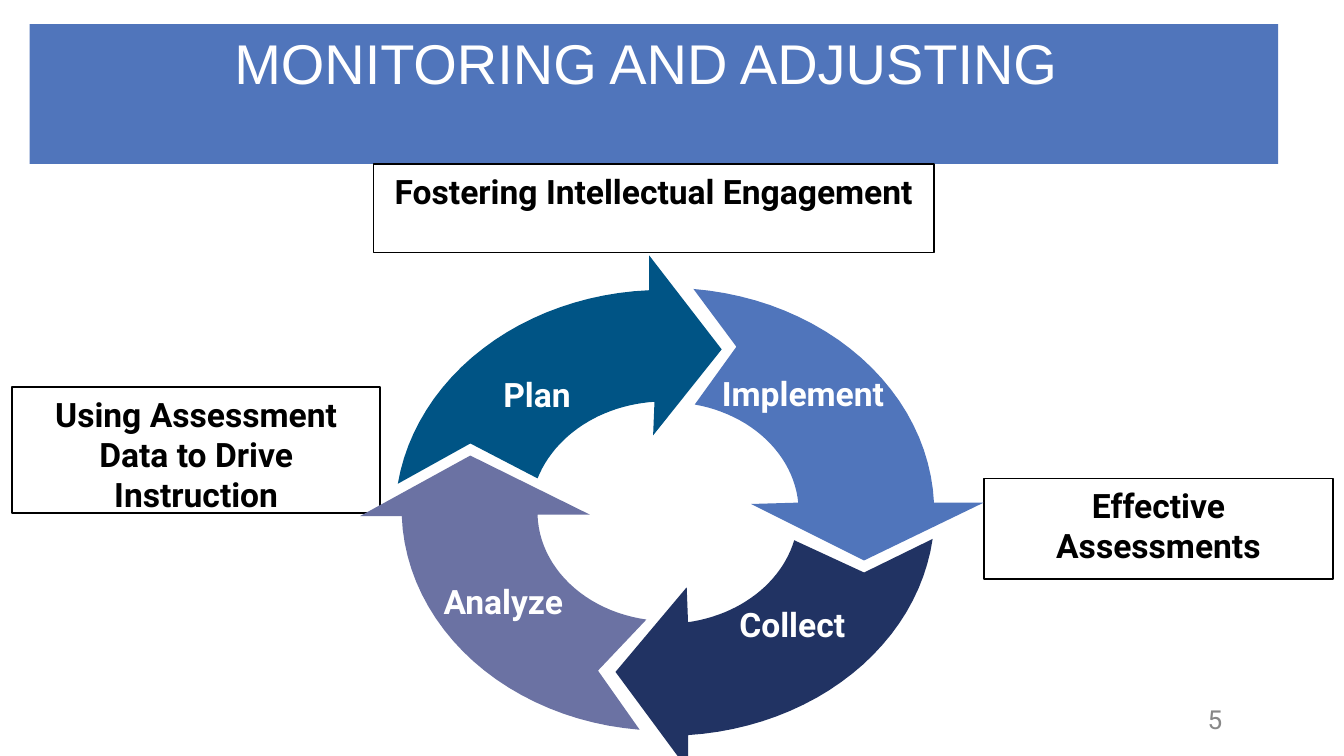
import math
from pptx import Presentation
from pptx.dml.color import RGBColor
from pptx.enum.text import MSO_ANCHOR, MSO_AUTO_SIZE, PP_ALIGN
from pptx.enum.shapes import MSO_SHAPE
from pptx.util import Inches, Pt

TOP, MIDDLE = MSO_ANCHOR.TOP, MSO_ANCHOR.MIDDLE
CENTER, RECT = PP_ALIGN.CENTER, MSO_SHAPE.RECTANGLE
NO_AUTOFIT = MSO_AUTO_SIZE.NONE

COLORS = {"blue": "5075BB", "teal": "005485", "navy": "213363", "violet": "6B72A3",
          "black": "000000", "white": "FFFFFF", "gray": "888888"}

TITLE = ("MONITORING AND ADJUSTING ", (0.22, 0.18, 9.29, 1.04))
PAGE_NUMBER = ("5", (8.5, 5.2, 1.08, 0.3))
SIDE_BOXES = [
    ("Using Assessment Data to Drive Instruction", (0.09, 2.88, 2.74, 0.94)),
    ("Effective Assessments", (7.32, 3.56, 2.6, 0.75)),
]
TOP_BOX = ("Fostering Intellectual Engagement", (2.78, 1.22, 4.17, 0.66))

# Clockwise ring: each arrow has an outer arc, a three-point head, an inner arc and a notch
RING_CENTER = (4.97, 3.81)
OUTER_RADII, INNER_RADII = (1.99, 1.67), (0.98, 0.82)
ARC_STEPS = 24
ARROWS = [
    {"color": "teal", "outer": [(2.96, 3.6), (4.83, 2.16)],
     "head": [(4.83, 1.9), (5.37, 2.6), (4.86, 3.24)],
     "inner": [(4.87, 2.99), (4, 3.56)], "notch": (3.5, 3.3)},
    {"color": "navy", "outer": [(6.94, 4.01), (5.12, 5.47)],
     "head": [(5.12, 5.73), (4.58, 5), (5.11, 4.37)],
     "inner": [(5.12, 4.63), (5.91, 4.02)], "notch": (6.43, 4.26)},
    {"color": "violet", "outer": [(4.76, 5.43), (2.99, 3.84)],
     "head": [(2.68, 3.84), (3.5, 3.39), (4.39, 3.83)],
     "inner": [(4, 3.83), (4.81, 4.61)], "notch": (4.45, 4.99)},
    {"color": "blue", "outer": [(5.16, 2.15), (6.95, 3.74)],
     "head": [(7.32, 3.74), (6.43, 4.17), (5.59, 3.75)],
     "inner": [(5.94, 3.74), (5.17, 3.01)], "notch": (5.48, 2.58)},
]
ARROW_LABELS = [
    ("Analyze", (3.27, 4.41, 0.95, 0.16)),
    ("Collect", (5.42, 4.58, 0.95, 0.16)),
    ("Implement", (5.27, 2.86, 1.41, 0.16)),
    ("Plan", (3.52, 2.87, 0.95, 0.16)),
]

TITLE_FONT = {"name": "Arial", "size": Pt(30), "bold": False}
PAGE_FONT = {"name": "Roboto", "size": Pt(14)}
BODY_FONT = {"name": "Roboto", "size": Pt(18), "bold": True}


def rgb(name):
    return RGBColor.from_string(COLORS[name])


def set_text(shape, text, font, color, anchor, margins=(0.1, 0.05), spacing=None):
    tf = shape.text_frame
    frame = {"word_wrap": True, "auto_size": NO_AUTOFIT, "vertical_anchor": anchor,
             "margin_left": Inches(margins[0]), "margin_right": Inches(margins[0]),
             "margin_top": Inches(margins[1]), "margin_bottom": Inches(margins[1])}
    for key, value in frame.items():
        setattr(tf, key, value)
    p = tf.paragraphs[0]
    p.alignment = CENTER
    p.line_spacing = spacing
    r = p.add_run()
    r.text = text
    for key, value in font.items():
        setattr(r.font, key, value)
    r.font.color.rgb = rgb(color)


def add_label(s, text, box, *style):
    tb = s.shapes.add_textbox(*map(Inches, box))
    set_text(tb, text, *style)


def add_title(s, text, box):
    title = s.shapes.title
    title.left, title.top, title.width, title.height = map(Inches, box)
    title.fill.solid()
    title.fill.fore_color.rgb = rgb("blue")
    set_text(title, text, TITLE_FONT, "white", TOP, (0.1, 0.03))


def add_outlined_box(s, text, box):
    sp = s.shapes.add_shape(RECT, *map(Inches, box))
    sp.shadow.inherit = False
    sp.fill.background()
    sp.line.color.rgb = rgb("black")
    sp.line.width = Pt(1)
    set_text(sp, text, BODY_FONT, "black", TOP)


def arc(start, end, radii):
    """Points from start to end, turning round the ring centre on an ellipse."""
    (cx, cy), (rx, ry) = RING_CENTER, radii
    (x0, y0), (x1, y1) = [((x - cx) / rx, (y - cy) / ry) for x, y in (start, end)]
    a0, k0, k1 = math.atan2(y0, x0), math.hypot(x0, y0), math.hypot(x1, y1)
    sweep = math.remainder(math.atan2(y1, x1) - a0, math.tau)
    points = []
    for i in range(ARC_STEPS + 1):
        t = i / ARC_STEPS
        a, k = a0 + sweep * t, k0 + (k1 - k0) * t
        points.append((cx + rx * k * math.cos(a), cy + ry * k * math.sin(a)))
    return points


def add_arrow(s, arrow):
    outline = (arc(*arrow["outer"], OUTER_RADII) + arrow["head"]
               + arc(*arrow["inner"], INNER_RADII) + [arrow["notch"]])
    points = [(Inches(x), Inches(y)) for x, y in outline]
    builder = s.shapes.build_freeform(*points[0])
    builder.add_line_segments(points[1:], close=True)
    sp = builder.convert_to_shape()
    sp.shadow.inherit = False
    sp.fill.solid()
    sp.fill.fore_color.rgb = rgb(arrow["color"])
    sp.line.fill.background()


def main():
    prs = Presentation()
    prs.slide_width = Inches(10)
    prs.slide_height = prs.slide_width * 9 // 16
    s = prs.slides.add_slide(prs.slide_layouts[5])
    add_title(s, *TITLE)
    add_label(s, *PAGE_NUMBER, PAGE_FONT, "gray", MIDDLE)
    for text, box in SIDE_BOXES:
        add_outlined_box(s, text, box)
    for arrow in ARROWS:
        add_arrow(s, arrow)
    for text, box in ARROW_LABELS:
        add_label(s, text, box, BODY_FONT, "white", MIDDLE, (0, 0), 0.95)
    add_outlined_box(s, *TOP_BOX)
    prs.save("out.pptx")


if __name__ == "__main__":
    main()
